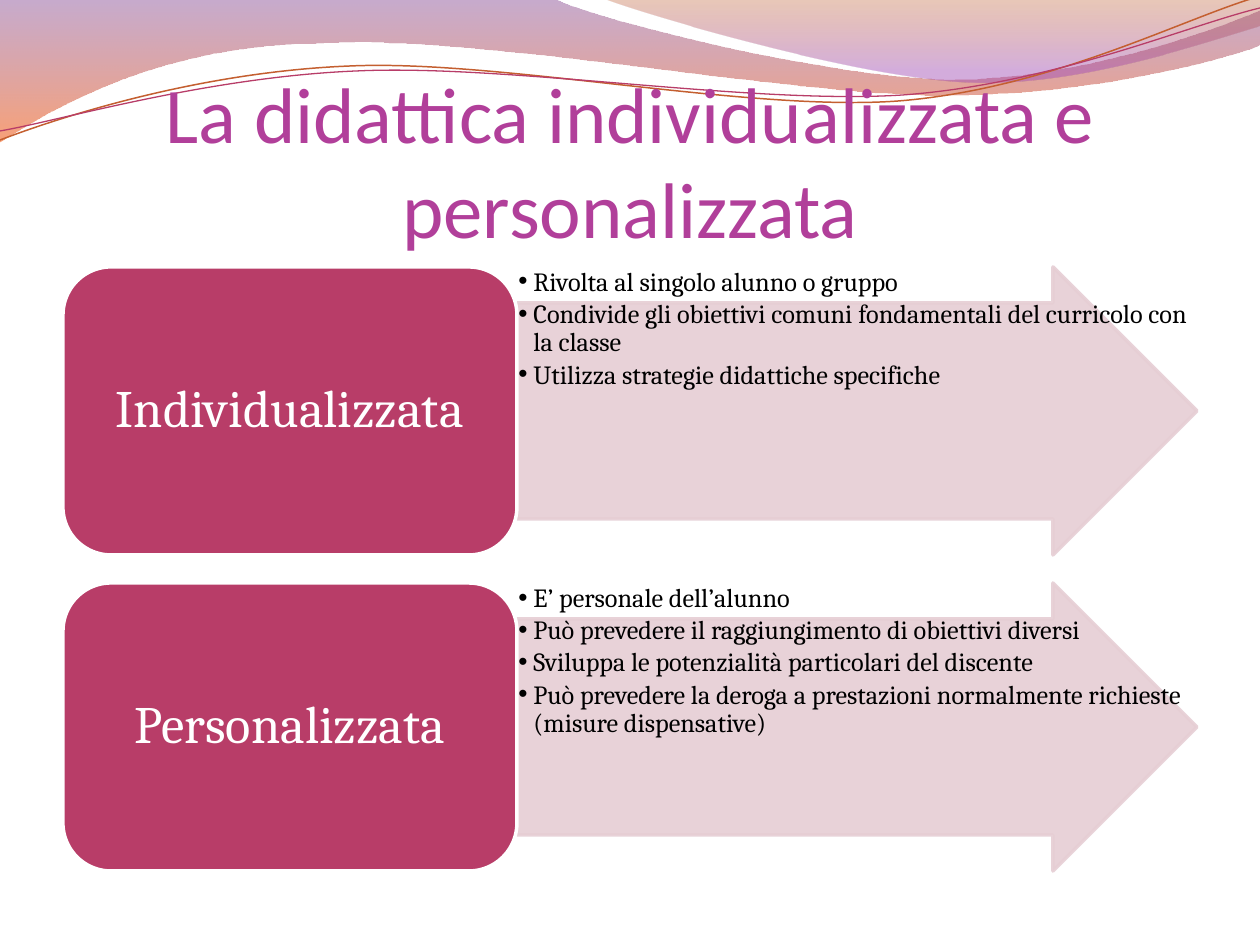
from dataclasses import dataclass

from lxml import etree
from pptx import Presentation
from pptx.dml.color import RGBColor
from pptx.enum.shapes import MSO_SHAPE
from pptx.enum.text import MSO_ANCHOR, MSO_AUTO_SIZE, PP_ALIGN
from pptx.oxml.ns import qn
from pptx.util import Pt

CENTER = PP_ALIGN.CENTER
LEFT = PP_ALIGN.LEFT
TOP, MIDDLE, BOTTOM = MSO_ANCHOR.TOP, MSO_ANCHOR.MIDDLE, MSO_ANCHOR.BOTTOM
ARROW, ROUNDED = MSO_SHAPE.RIGHT_ARROW, MSO_SHAPE.ROUNDED_RECTANGLE

# Content
TITLE = "La didattica individualizzata e personalizzata"
ROWS = [
    ("Individualizzata", [
        "Rivolta al singolo alunno o gruppo",
        "Condivide gli obiettivi comuni fondamentali del curricolo con la classe",
        "Utilizza strategie didattiche specifiche",
    ]),
    ("Personalizzata", [
        "E’ personale dell’alunno",
        "Può prevedere il raggiungimento di obiettivi diversi",
        "Sviluppa le potenzialità particolari del discente",
        "Può prevedere la deroga a prestazioni normalmente richieste (misure dispensative)",
    ]),
]

# Header waves: a start point, then line ends (1 point) or Bézier segments (3 points)
# Gradient stops are (position, colour, opacity %)
WAVES = [
    ((0, -1), [
        [(554, -1)],
        [(600, 21), (837, 79), (955, 79)],
        [(1075, 79), (1207, 33), (1260, 11)],
        [(1261, 45)],
        [(1239, 55), (1096, 96), (940, 95)],
        [(784, 95), (481, 35), (324, 43)],
        [(163, 44), (58, 105), (-1, 142)],
    ], [(0, "834591", 45), (1, "F35307", 55)]),
    ((604, -1), [
        [(641, 14), (859, 78), (969, 82)],
        [(1079, 87), (1211, 40), (1260, 26)],
        [(1260, 0)],
    ], [(0, "B74915", 30), (0.8, "A14BB4", 45)]),
]
STRANDS = [
    ((0, 140), [
        [(60, 117), (199, 72), (349, 66)],
        [(498, 59), (747, 112), (898, 101)],
        [(1050, 89), (1182, 19), (1257, -3)],
    ], "C45F30", 0.85),
    ((0, 131), [
        [(59, 121), (207, 77), (357, 71)],
        [(508, 64), (752, 105), (903, 95)],
        [(1053, 84), (1186, 26), (1260, 8)],
    ], "B83D68", 0.75),
]

# Layout in px
SLIDE_SIZE = (1260, 945)
TITLE_BOX = (63, 97, 1134, 157)
MARGIN, ROW_TOP, ROW_PITCH, ROW_HEIGHT = 63, 267, 316, 288
LABEL_WIDTH, ARROW_WIDTH = 454, 680
BULLET_INDENT = 15


@dataclass(frozen=True)
class Theme:
    title: str = "B13F9A"
    label_fill: str = "B83D68"
    label_text: str = "FFFFFF"
    arrow: str = "E6CED4"
    body: str = "000000"
    title_font: str = "Calibri"
    body_font: str = "Cambria"
    bullet_font: str = "Arial"
    title_size: int = 45
    label_size: int = 30
    body_size: int = 15
    outline: int = 2


THEME = Theme()


def px(value):
    return round(value * 914400 / 126)


def rgb(value):
    return RGBColor.from_string(value)


def set_opacity(shape, percentages):
    colors = shape.element.spPr.iter(qn("a:srgbClr"))
    for color, percent in zip(colors, percentages):
        etree.SubElement(color, qn("a:alpha"), val=str(percent * 1000))


def add_path(slide, start, segments, close):
    builder = slide.shapes.build_freeform(px(start[0]), px(start[1]))
    points = [(px(x), px(y)) for segment in segments for x, y in segment]
    builder.add_line_segments(points, close=close)
    shape = builder.convert_to_shape()
    shape.shadow.inherit = False

    # Merge each run of three points into one Bézier segment
    lines = iter(list(shape.element.spPr.iter(qn("a:lnTo"))))
    for segment in segments:
        first, *others = [next(lines) for _ in segment]
        if others:
            first.tag = qn("a:cubicBezTo")
        for line in others:
            first.append(line[0])
            line.getparent().remove(line)
    return shape


def add_header(slide):
    for start, segments, stops in WAVES:
        wave = add_path(slide, start, segments, True)
        wave.line.fill.background()
        wave.fill.gradient()
        wave.fill.gradient_angle = 270
        for stop, (position, color, _) in zip(wave.fill.gradient_stops, stops):
            stop.position = position
            stop.color.rgb = rgb(color)
        set_opacity(wave, [opacity for _, _, opacity in stops])
    for start, segments, color, width in STRANDS:
        strand = add_path(slide, start, segments, False)
        strand.fill.background()
        strand.line.color.rgb = rgb(color)
        strand.line.width = Pt(width)


def set_frame(frame, anchor, insets):
    frame.word_wrap = True
    frame.auto_size = MSO_AUTO_SIZE.NONE
    frame.vertical_anchor = anchor
    (frame.margin_left, frame.margin_top,
     frame.margin_right, frame.margin_bottom) = map(px, insets)


def write(paragraph, text, font, size, color, align, spacing=0.9):
    paragraph.alignment = align
    paragraph.line_spacing = spacing
    run = paragraph.add_run()
    run.text = text
    run.font.name = font
    run.font.size = Pt(size)
    run.font.color.rgb = rgb(color)


def add_block(slide, preset, box, fill, line):
    shape = slide.shapes.add_shape(preset, *map(px, box))
    shape.shadow.inherit = False
    shape.fill.solid()
    shape.fill.fore_color.rgb = rgb(fill)
    shape.line.color.rgb = rgb(line)
    shape.line.width = Pt(THEME.outline)
    return shape


def add_bullets(slide, box, items):
    frame = slide.shapes.add_textbox(*map(px, box)).text_frame
    set_frame(frame, TOP, (1.5, 1.5, 1.5, 1.5))
    for index, item in enumerate(items):
        paragraph = frame.add_paragraph() if index else frame.paragraphs[0]
        write(paragraph, item, THEME.body_font, THEME.body_size, THEME.body, LEFT)
        paragraph.level = 1
        paragraph.space_after = Pt(2.25)
        properties = paragraph._p.get_or_add_pPr()
        properties.set("marL", str(px(BULLET_INDENT)))
        properties.set("indent", str(-px(BULLET_INDENT)))
        etree.SubElement(properties, qn("a:buFont"), typeface=THEME.bullet_font)
        etree.SubElement(properties, qn("a:buChar"), char="•")


def add_row(slide, top, label, items):
    arrow_box = (MARGIN + LABEL_WIDTH, top, ARROW_WIDTH, ROW_HEIGHT)
    arrow = add_block(slide, ARROW, arrow_box, THEME.arrow, THEME.arrow)
    arrow.adjustments[0], arrow.adjustments[1] = 0.75, 0.5
    set_opacity(arrow, (90, 90))
    add_bullets(slide, arrow_box, items)

    block = add_block(slide, ROUNDED, (MARGIN, top, LABEL_WIDTH, ROW_HEIGHT),
                      THEME.label_fill, THEME.label_text)
    set_frame(block.text_frame, MIDDLE, (15, 8, 15, 8))
    write(block.text_frame.paragraphs[0], label, THEME.body_font,
          THEME.label_size, THEME.label_text, CENTER)


def add_title(slide):
    title = slide.shapes.title
    title.left, title.top, title.width, title.height = map(px, TITLE_BOX)
    set_frame(title.text_frame, BOTTOM, (0, 6, 0, 0))
    write(title.text_frame.paragraphs[0], TITLE, THEME.title_font,
          THEME.title_size, THEME.title, CENTER, 1.0)
    # Bring the title in front of the header
    title.element.getparent().append(title.element)


def main():
    presentation = Presentation()
    presentation.slide_width, presentation.slide_height = map(px, SLIDE_SIZE)
    slide = presentation.slides.add_slide(presentation.slide_layouts[5])
    add_header(slide)
    add_title(slide)
    for index, (label, items) in enumerate(ROWS):
        add_row(slide, ROW_TOP + index * ROW_PITCH, label, items)
    presentation.save("out.pptx")


if __name__ == "__main__":
    main()
